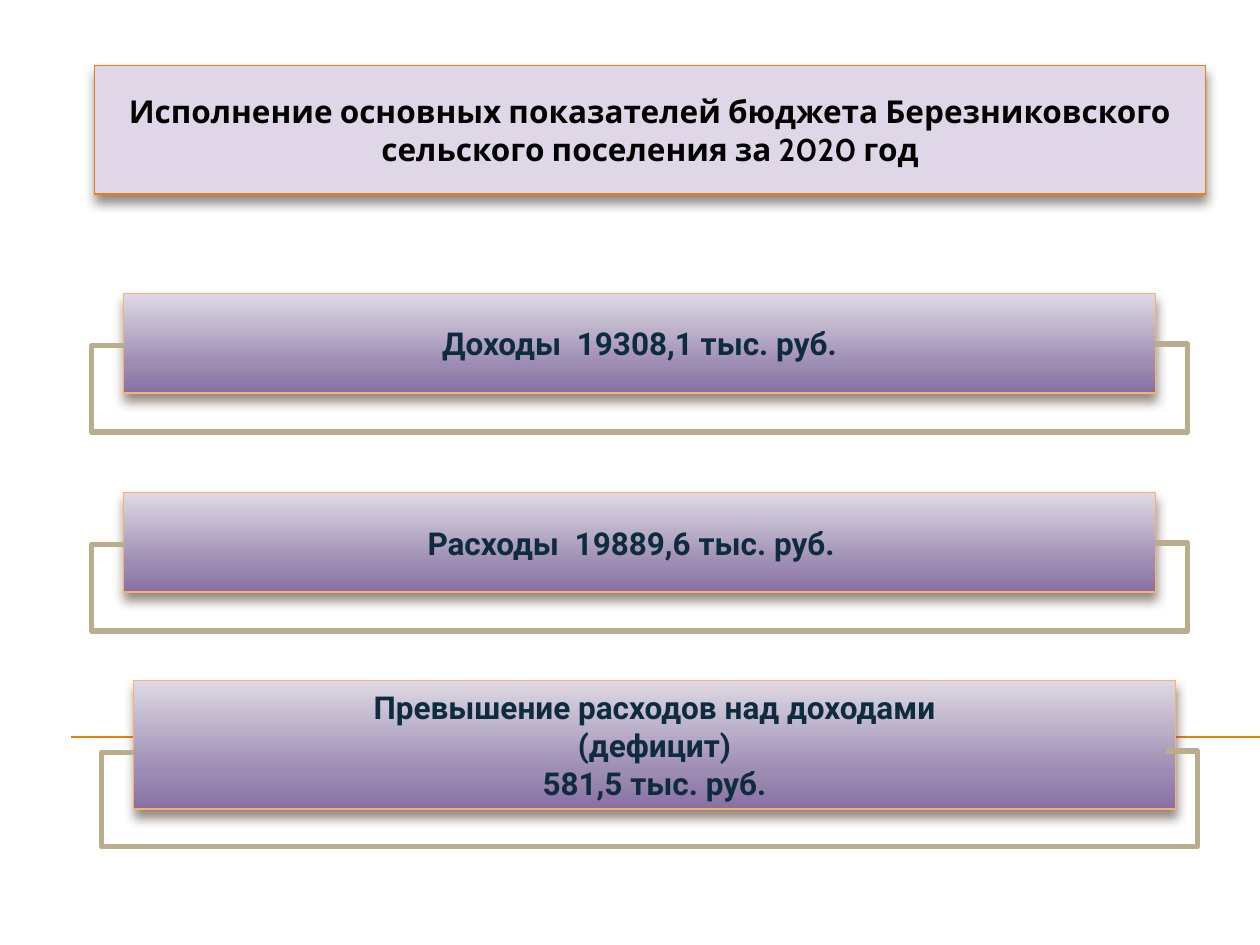
from lxml import etree
from pptx import Presentation
from pptx.dml.color import RGBColor
from pptx.enum.shapes import MSO_CONNECTOR as CONN, MSO_SHAPE as SHAPE
from pptx.enum.text import MSO_ANCHOR as ANCHOR, MSO_AUTO_SIZE as AUTO, PP_ALIGN as ALIGN
from pptx.oxml import parse_xml
from pptx.oxml.ns import nsdecls, qn
from pptx.util import Inches, Pt

COLORS = {"title": "DFD7E7", "accent": "F07F09", "bar_line": "F9B268",
          "bracket": "BAAD8D", "shadow": "4E3B30", "black": "000000",
          "bar_text": "0E2C3E"}
BAR_STOPS = [(0, "DED9E5"), (72, "9C8BB2"), (100, "8870A5")]
TITLE_FONT = {"name": "Cabin", "size": Pt(18), "bold": True}
BAR_FONT = {"name": "Roboto", "size": Pt(18), "bold": True}


def rgb(name):
    return RGBColor.from_string(COLORS[name])


def set_line(shape, color, width):
    shape.line.color.rgb = rgb(color)
    shape.line.width = Pt(width)


def add_shadow(shape):
    shape.shadow.inherit = False
    effects = shape._element.spPr.find(qn("a:effectLst"))
    effects.append(parse_xml(
        f'<a:outerShdw {nsdecls("a")} blurRad="{Pt(6)}" dist="{Pt(4)}" '
        f'dir="5400000" rotWithShape="0"><a:srgbClr val="{COLORS["shadow"]}">'
        '<a:alpha val="60000"/></a:srgbClr></a:outerShdw>'))


def fill_gradient(shape):
    stops = "".join(f'<a:gs pos="{pos * 1000}"><a:srgbClr val="{color}"/></a:gs>'
                    for pos, color in BAR_STOPS)
    grad = parse_xml(f'<a:gradFill {nsdecls("a")} rotWithShape="1"><a:gsLst>{stops}'
                     '</a:gsLst><a:lin ang="5400000" scaled="0"/></a:gradFill>')
    shape._element.spPr.find(qn("a:prstGeom")).addnext(grad)


def write_lines(shape, lines, font, color):
    tf = shape.text_frame
    tf.word_wrap = True
    tf.auto_size = AUTO.NONE
    tf.vertical_anchor = ANCHOR.MIDDLE
    for i, line in enumerate(lines):
        p = tf.paragraphs[0] if i == 0 else tf.add_paragraph()
        p.alignment = ALIGN.CENTER
        p.line_spacing = 1.0
        p.space_before = Pt(0)
        r = p.add_run()
        r.text = line
        for key, value in font.items():
            setattr(r.font, key, value)
        r.font.color.rgb = rgb(color)


def add_line(s, kind, x1, y1, x2, y2, color, width):
    line = s.shapes.add_connector(kind, *map(Inches, (x1, y1, x2, y2)))
    set_line(line, color, width)
    etree.SubElement(line._element.spPr, qn("a:effectLst"))
    return line


def add_title(s, left, top, width, height, lines):
    title = s.shapes.title
    title.left, title.top, title.width, title.height = map(
        Inches, (left, top, width, height))
    title.fill.solid()
    title.fill.fore_color.rgb = rgb("title")
    set_line(title, "accent", 0.79)
    add_shadow(title)
    write_lines(title, lines, TITLE_FONT, "black")


def add_bar(s, left, top, width, height, lines, shift=0):
    """Gradient bar; shift is an extra right inset that moves the text left."""
    bar = s.shapes.add_shape(SHAPE.RECTANGLE, *map(Inches, (left, top, width, height)))
    fill_gradient(bar)
    set_line(bar, "bar_line", 0.79)
    add_shadow(bar)
    write_lines(bar, lines, BAR_FONT, "bar_text")
    bar.text_frame.margin_right = Inches(0.1 + shift)


def add_bracket(s, left, top, width, drop, rise=0.01, reach=0.25):
    """Five-part elbow that runs below a bar from its left side to its right."""
    line = add_line(s, CONN.ELBOW, left + width, top, left, top + rise, "bracket", 3)
    line._element.spPr.find(qn("a:xfrm")).set("rot", "10800000")
    geom = line._element.spPr.find(qn("a:prstGeom"))
    geom.set("prst", "bentConnector5")
    guides = geom.find(qn("a:avLst"))
    ratios = (-reach / width, -drop / rise, 1 + reach / width)
    for i, ratio in enumerate(ratios, start=1):
        etree.SubElement(guides, qn("a:gd"), name=f"adj{i}",
                         fmla=f"val {round(ratio * 100000)}")


def main():
    prs = Presentation()
    prs.slide_width, prs.slide_height = Inches(10), Inches(7.5)
    s = prs.slides.add_slide(prs.slide_layouts[5])

    # Rule behind the lowest bar
    add_line(s, CONN.STRAIGHT, 0.56, 5.85, 10, 5.85, "accent", 0.75)

    # Heading
    add_title(s, 0.75, 0.52, 8.82, 1.02,
              ["Исполнение основных показателей бюджета Березниковского",
               "сельского поселения за 2020 год"])

    # Budget figures
    add_bar(s, 0.98, 2.33, 8.19, 0.79, ["Доходы  19308,1 тыс. руб."])
    add_bar(s, 0.98, 3.91, 8.19, 0.79, ["Расходы  19889,6 тыс. руб."], shift=0.13)
    add_bar(s, 1.06, 5.4, 8.27, 1.02,
            ["Превышение расходов над доходами", "(дефицит)", "581,5 тыс. руб."])

    # Brackets under the bars
    for left, top, drop in [(0.98, 2.73, 0.7), (0.98, 4.31, 0.7), (1.06, 5.96, 0.76)]:
        add_bracket(s, left, top, 8.19, drop)

    prs.save("out.pptx")


if __name__ == "__main__":
    main()
